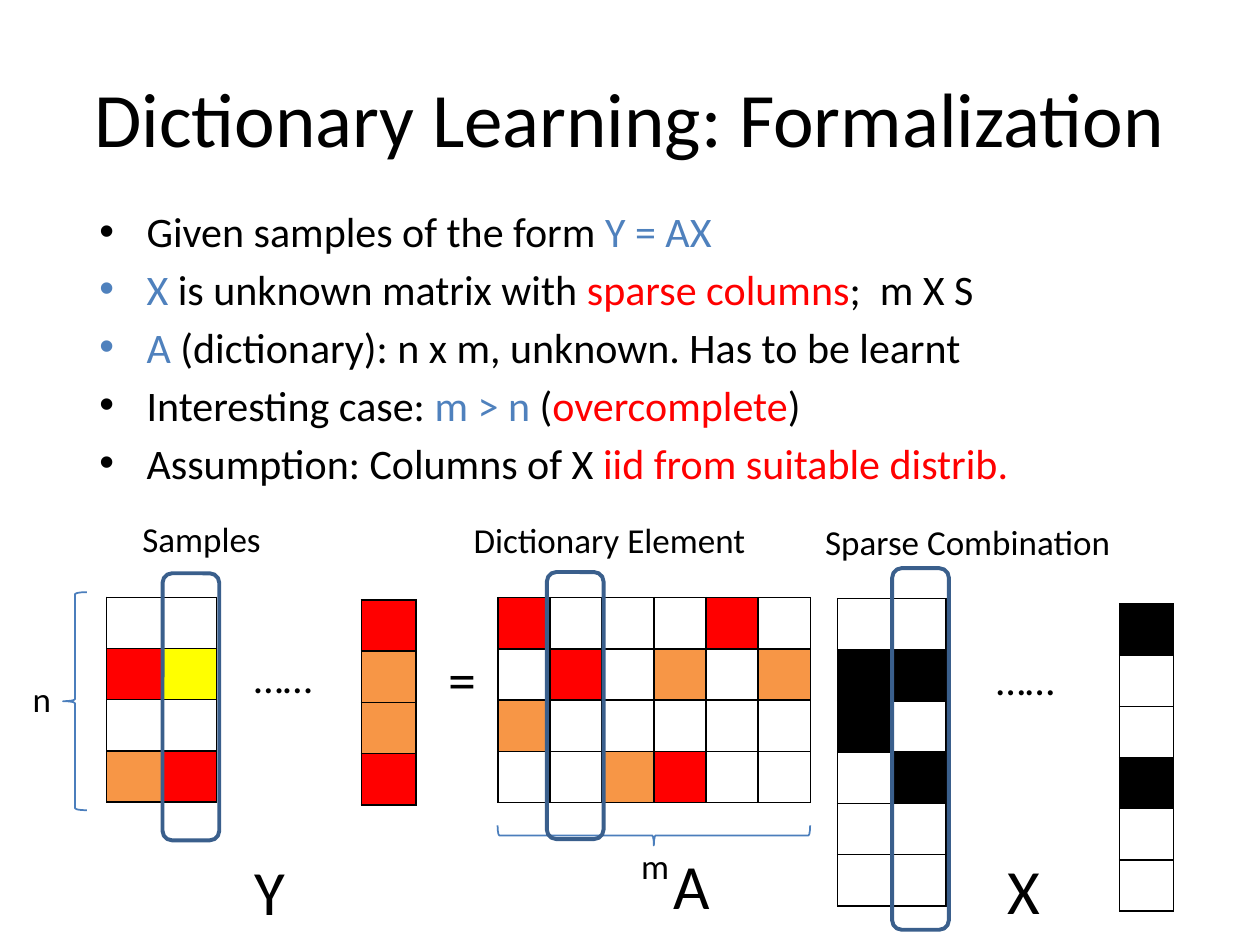
from lxml import etree
from pptx import Presentation
from pptx.dml.color import RGBColor
from pptx.enum.shapes import MSO_SHAPE
from pptx.enum.text import MSO_ANCHOR, PP_ALIGN
from pptx.oxml.ns import qn
from pptx.util import Pt

BRACE = MSO_SHAPE.LEFT_BRACE
FRAME = MSO_SHAPE.ROUNDED_RECTANGLE
CENTER = PP_ALIGN.CENTER
MIDDLE = MSO_ANCHOR.MIDDLE
BLACK, BLUE, RED = "000000", "4F81BD", "FF0000"
FILLS = {".": "FFFFFF", "R": RED, "O": "F79646", "Y": "FFFF00", "K": BLACK}
CELL_HEIGHT = 29.3


def color(value):
    return RGBColor.from_string(value)


def add_text(left, top, width, height, text, size, wrap=False):
    box = page.shapes.add_textbox(Pt(left), Pt(top), Pt(width), Pt(height))
    box.text_frame.word_wrap = wrap
    para = box.text_frame.paragraphs[0]
    para.text = text
    para.font.size = Pt(size)
    para.font.name = "Calibri"
    para.font.color.rgb = color(BLACK)
    return box.text_frame


deck = Presentation()
deck.slide_width, deck.slide_height = Pt(720), Pt(540)
page = deck.slides.add_slide(deck.slide_layouts[6])

title = add_text(36, 21.6, 648, 90, "Dictionary Learning: Formalization", 44, True)
title.vertical_anchor = MIDDLE
title.paragraphs[0].alignment = CENTER

bullets = [
    [("Given samples of the form ", BLACK), ("Y = AX", BLUE)],
    [("X", BLUE), (" is unknown matrix with ", BLACK),
     ("sparse columns", RED), (";  m X S", BLACK)],
    [("A", BLUE), (" (dictionary): n x m, unknown. Has to be learnt", BLACK)],
    [("Interesting case: ", BLACK), ("m > n", BLUE), (" (", BLACK),
     ("overcomplete", RED), (")", BLACK)],
    [("Assumption: Columns of X ", BLACK), ("iid from suitable distrib.", RED)],
]
body = page.shapes.add_textbox(Pt(49.7), Pt(113.8), Pt(628.6), Pt(346)).text_frame
body.word_wrap = True
for index, spans in enumerate(bullets):
    para = body.add_paragraph() if index else body.paragraphs[0]
    para.space_before = Pt(4.3)
    para.font.size = Pt(24)
    para.font.name = "Calibri"
    properties = para._p.get_or_add_pPr()
    properties.set("marL", str(Pt(27)))
    properties.set("indent", str(Pt(-27)))
    bullet_font = etree.Element(qn("a:buFont"), typeface="Arial")
    bullet = etree.Element(qn("a:buChar"), char="•")
    spacing = properties.find(qn("a:spcBef"))
    spacing.addnext(bullet_font)
    bullet_font.addnext(bullet)
    for text, shade in spans:
        span = para.add_run()
        span.text = text
        span.font.size = Pt(24)
        span.font.name = "Calibri"
        span.font.color.rgb = color(shade)

matrices = [
    (284.6, 341.5, 29.76, ["R...R.", ".R.O.O", "O.....", "..OR.."]),
    (478.6, 342, 30.9, [".", "K", "K", ".", ".", "."]),
    (639.8, 345, 30.9, ["K", ".", ".", "K", ".", "."]),
    (509.6, 342, 30.9, [".", "K", ".", "K", ".", "."]),
    (61, 341.3, 31.2, [".", "R", ".", "O"]),
    (92.6, 341.3, 31.2, [".", "Y", ".", "R"]),
    (206.5, 342.8, 31.2, ["R", "O", "O", "R"]),
]
for left, top, cell_width, pattern in matrices:
    rows, columns = len(pattern), len(pattern[0])
    matrix = page.shapes.add_table(
        rows, columns, Pt(left), Pt(top),
        Pt(cell_width * columns), Pt(CELL_HEIGHT * rows)).table
    for column in matrix.columns:
        column.width = Pt(cell_width)
    for row, codes in zip(matrix.rows, pattern):
        row.height = Pt(CELL_HEIGHT)
        for cell, code in zip(row.cells, codes):
            properties = cell._tc.get_or_add_tcPr()
            for side in ("lnL", "lnR", "lnT", "lnB"):
                border = etree.SubElement(properties, qn(f"a:{side}"), w=str(Pt(1)))
                solid = etree.SubElement(border, qn("a:solidFill"))
                etree.SubElement(solid, qn("a:srgbClr"), val=BLACK)
            cell.fill.solid()
            cell.fill.fore_color.rgb = color(FILLS[code])

labels = [
    (138.2, 368.6, 48.2, 36, "……", 24),
    (562.3, 370, 48.2, 36, "……", 24),
    (249.1, 365, 31, 46, "=", 32),
    (138.2, 483.8, 32.4, 51, "Y", 36),
    (378, 480.2, 35.3, 51, "A", 36),
    (568.8, 483.1, 33.1, 51, "X", 36),
    (11.5, 383.8, 25.2, 31.5, "n", 20),
    (359.3, 478.8, 31, 31.5, "m", 20),
    (263.5, 293, 171.4, 31.5, "Dictionary Element", 20),
    (464.4, 293.8, 179.3, 31.5, "Sparse Combination", 20),
    (74.2, 292.3, 82.8, 31.5, "Samples", 20),
]
for label in labels:
    add_text(*label)

outlines = [
    (BRACE, 36, 338.4, 13.7, 124.6, 0, "4B7EBC", 1),
    (BRACE, 367.9, 388.1, 11.5, 178.6, 270, "4B7EBC", 1),
    (FRAME, 312.5, 326.9, 32.4, 152.6, 0, "3A5F8C", 2.25),
    (FRAME, 509.8, 324.7, 32.4, 206.6, 0, "3A5F8C", 2.25),
    (FRAME, 92.9, 327.6, 32.4, 152.6, 0, "3A5F8C", 2.25),
]
for kind, left, top, width, height, angle, shade, weight in outlines:
    outline = page.shapes.add_shape(kind, Pt(left), Pt(top), Pt(width), Pt(height))
    outline.rotation = angle
    outline.shadow.inherit = False
    outline.fill.background()
    outline.line.color.rgb = color(shade)
    outline.line.width = Pt(weight)

deck.save("out.pptx")
